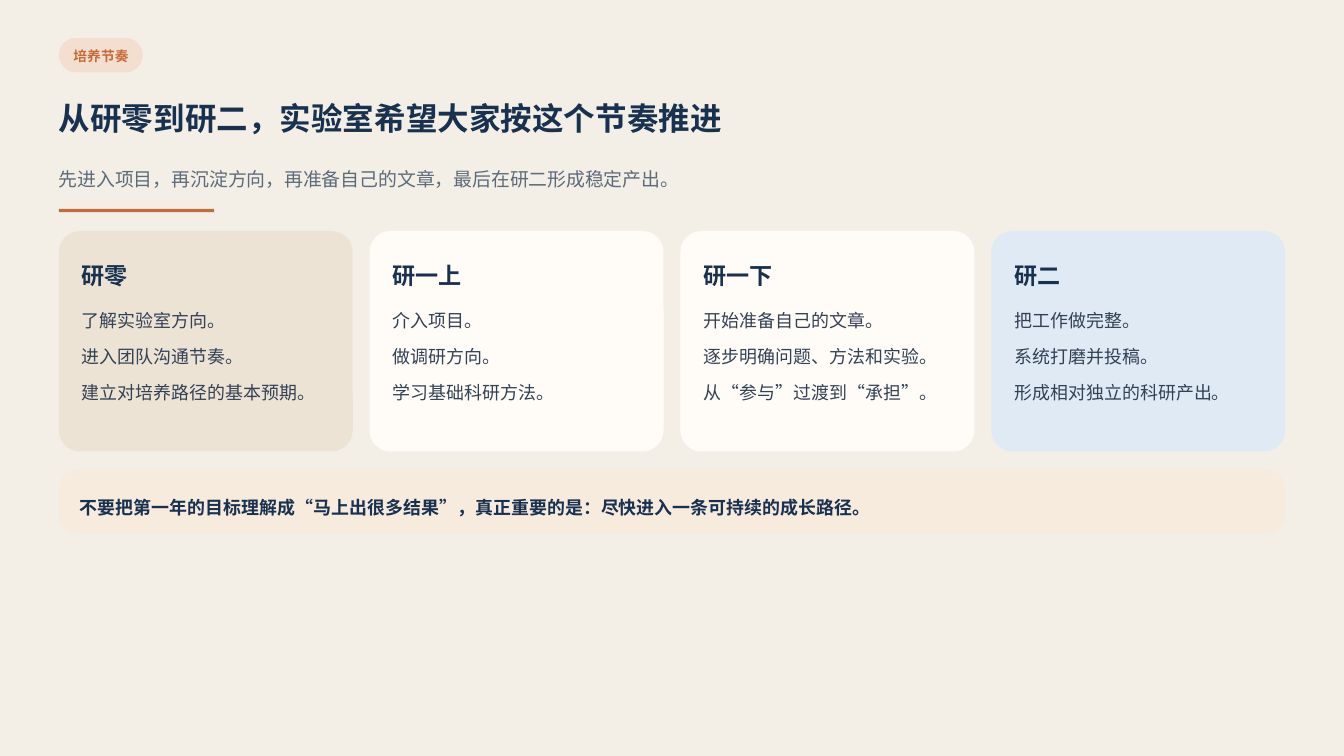
from lxml import etree
from pptx import Presentation
from pptx.dml.color import RGBColor
from pptx.enum.shapes import MSO_SHAPE
from pptx.enum.text import MSO_ANCHOR, MSO_AUTO_SIZE, PP_ALIGN
from pptx.oxml.ns import qn
from pptx.util import Pt

PX = 9525
FONT = "Noto Sans CJK SC"
RECT, ROUNDED = MSO_SHAPE.RECTANGLE, MSO_SHAPE.ROUNDED_RECTANGLE
TOP, NO_FIT, LEFT = MSO_ANCHOR.TOP, MSO_AUTO_SIZE.NONE, PP_ALIGN.LEFT

NAVY, SLATE, GREY, RUST = "18314F", "334155", "5C6B7A", "C56B39"
MARGIN, CONTENT_W = 56, 1168
CARD_TOP, CARD_W, CARD_H, CARD_GAP, CARD_PAD = 220, 280, 210, 16, 22

STAGES = [
    ("研零", "ECE3D5", ["了解实验室方向。", "进入团队沟通节奏。", "建立对培养路径的基本预期。"]),
    ("研一上", "FFFCF8", ["介入项目。", "做调研方向。", "学习基础科研方法。"]),
    ("研一下", "FFFCF8", ["开始准备自己的文章。", "逐步明确问题、方法和实验。", "从“参与”过渡到“承担”。"]),
    ("研二", "DFEAF4", ["把工作做完整。", "系统打磨并投稿。", "形成相对独立的科研产出。"]),
]


def rgb(value):
    return RGBColor.from_string(value)


def emu(*lengths):
    return [length * PX for length in lengths]


def add_panel(slide, box, fill, radius=0):
    panel = slide.shapes.add_shape(ROUNDED if radius else RECT, *emu(*box))
    if radius:
        panel.adjustments[0] = radius / min(box[2:])
    panel.shadow.inherit = False
    panel.fill.solid()
    panel.fill.fore_color.rgb = rgb(fill)
    panel.line.fill.background()


def style_paragraph(paragraph, size, color, bold, spacing, gap):
    paragraph.alignment = LEFT
    paragraph.line_spacing = spacing
    paragraph.space_before = Pt(gap)
    properties = paragraph._p.get_or_add_pPr()
    properties.set("marL", "0")
    properties.set("indent", "0")
    etree.SubElement(properties, qn("a:buNone"))
    font = paragraph.font
    font.size, font.bold, font.name = Pt(size), bold, FONT
    font.color.rgb = rgb(color)
    defaults = properties.find(qn("a:defRPr"))
    etree.SubElement(defaults, qn("a:ea")).set("typeface", FONT)


def write_lines(holder, lines, size, color, spacing, bold=False, gap=0):
    frame = holder.text_frame
    frame.margin_left = frame.margin_top = frame.margin_right = frame.margin_bottom = 0
    frame.word_wrap, frame.auto_size, frame.vertical_anchor = True, NO_FIT, TOP
    frame.text = "\n".join(lines)
    for index, paragraph in enumerate(frame.paragraphs):
        style_paragraph(paragraph, size, color, bold, spacing, gap if index else 0)


def add_label(slide, box, text, size, color, spacing, bold=False):
    label = slide.shapes.add_textbox(*emu(*box))
    write_lines(label, [text], size, color, spacing, bold)


def place(slide, placeholder, box):
    placeholder.left, placeholder.top, placeholder.width, placeholder.height = emu(*box)
    slide.shapes._spTree.append(placeholder._element)


def add_stage(slide, left, stage, points_holder):
    heading, fill, points = stage
    text_left, text_w = left + CARD_PAD, CARD_W - 2 * CARD_PAD
    add_panel(slide, (left, CARD_TOP, CARD_W, CARD_H), fill, 20)
    add_label(slide, (text_left, CARD_TOP + CARD_PAD, text_w, 33), heading, 16.5, NAVY, 1.25, True)
    place(slide, points_holder, (text_left, 285, text_w, 122))
    write_lines(points_holder, points, 12.8, SLATE, 1.5, gap=2.5)


def main():
    deck = Presentation()
    deck.slide_width, deck.slide_height = emu(1280, 720)
    slide = deck.slides.add_slide(deck.slide_layouts.get_by_name("Comparison"))
    slide.background.fill.solid()
    slide.background.fill.fore_color.rgb = rgb("F4EFE6")
    title, *point_holders = list(slide.placeholders)

    add_panel(slide, (MARGIN, 36, 80, 33), "F3DFD0", 16.5)
    add_label(slide, (70, 44, 56, 17), "培养节奏", 9.8, RUST, 1.1, True)
    place(slide, title, (MARGIN, 87, CONTENT_W, 43))
    write_lines(title, ["从研零到研二，实验室希望大家按这个节奏推进"], 22.5, NAVY, 1.2, True)
    add_label(slide, (MARGIN, 149, CONTENT_W, 33),
              "先进入项目，再沉淀方向，再准备自己的文章，最后在研二形成稳定产出。", 13.5, GREY, 1.5)
    add_panel(slide, (MARGIN, 199, 148, 3), RUST)

    for index, (stage, points_holder) in enumerate(zip(STAGES, point_holders)):
        add_stage(slide, MARGIN + index * (CARD_W + CARD_GAP), stage, points_holder)

    add_panel(slide, (MARGIN, 447, CONTENT_W, 61), "F7EBDD", 18)
    add_label(slide, (76, 464, 1128, 30),
              "不要把第一年的目标理解成“马上出很多结果”，真正重要的是：尽快进入一条可持续的成长路径。",
              12.8, NAVY, 1.45, True)
    deck.save("out.pptx")


if __name__ == "__main__":
    main()
